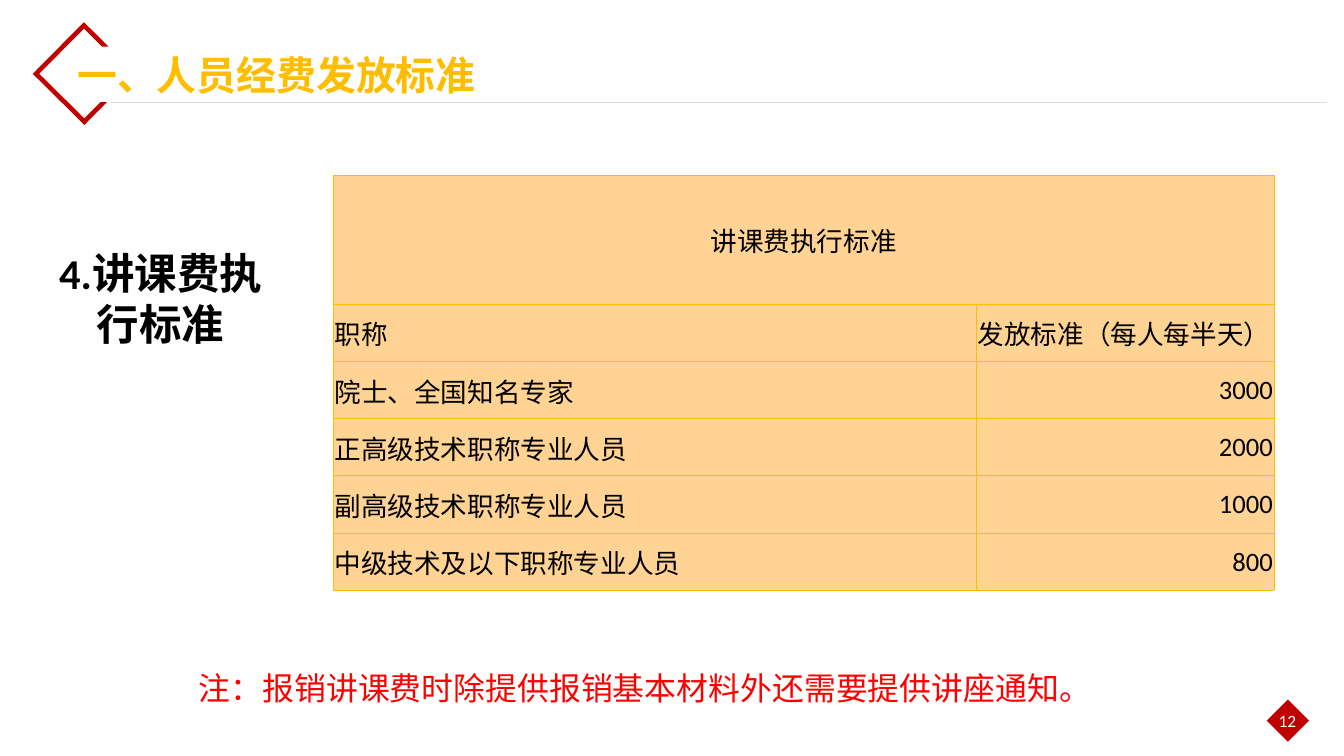
"""Build the slide on lecture fee standards."""
from lxml import etree
from pptx import Presentation
from pptx.dml.color import RGBColor
from pptx.enum.shapes import MSO_CONNECTOR, MSO_SHAPE
from pptx.enum.text import MSO_ANCHOR, MSO_AUTO_SIZE, PP_ALIGN
from pptx.oxml.ns import qn
from pptx.util import Cm, Pt

LEFT, CENTER, RIGHT = PP_ALIGN.LEFT, PP_ALIGN.CENTER, PP_ALIGN.RIGHT
TOP, MIDDLE = MSO_ANCHOR.TOP, MSO_ANCHOR.MIDDLE
DIAMOND, FRAME, RECTANGLE = MSO_SHAPE.DIAMOND, MSO_SHAPE.FRAME, MSO_SHAPE.RECTANGLE

RED = RGBColor(0xC0, 0x00, 0x00)
NOTE_RED = RGBColor(0xFF, 0x00, 0x00)
GOLD = RGBColor(0xFF, 0xBD, 0x00)
PEACH = RGBColor(0xFF, 0xD3, 0x93)
GREY = RGBColor(0xD9, 0xD9, 0xD9)
WHITE = RGBColor(0xFF, 0xFF, 0xFF)
BLACK = RGBColor(0x00, 0x00, 0x00)
LATIN_FONT, CHINESE_FONT = "Calibri", "Noto Sans CJK SC"

TITLE = "一、人员经费发放标准"
SUBTITLE = "4.讲课费执行标准"
NOTE = "注：报销讲课费时除提供报销基本材料外还需要提供讲座通知。"
PAGE_NUMBER = "12"
TABLE_HEADING = "讲课费执行标准"
TABLE_ROWS = [
    ("职称", "发放标准（每人每半天）"),
    ("院士、全国知名专家", "3000"),
    ("正高级技术职称专业人员", "2000"),
    ("副高级技术职称专业人员", "1000"),
    ("中级技术及以下职称专业人员", "800"),
]

SLIDE_SIZE = (35.71, 20.09)
TITLE_BOX = (1.8, 1.22, 11.53, 1.55)
SUBTITLE_BOX = (0.97, 6.45, 6.6, 3)
NOTE_BOX = (5.03, 17.65, 24.46, 1.27)
PAGE_NUMBER_BOX = (33.53, 18.75, 1.35, 0.84)
TITLE_RULE = (2.95, 2.72, 35.26, 2.72)
TABLE_ORIGIN = (8.86, 4.65)
COLUMN_WIDTHS = (17.09, 7.9)
HEADING_HEIGHT, ROW_HEIGHT = 3.43, 1.52
DECORATIONS = [
    (DIAMOND, (33.66, 18.59, 1.12, 1.12), RED, 0),
    (FRAME, (1.27, 0.99, 1.93, 1.93), RED, 44.7),
    (RECTANGLE, (2.24, 1.24, 8.53, 1.47), WHITE, 0),
]

TITLE_FORMAT = {"size": Pt(30), "bold": True, "name": CHINESE_FONT}
SUBTITLE_FORMAT = {"size": Pt(32), "bold": True, "name": LATIN_FONT}
NOTE_FORMAT = {"size": Pt(24), "name": LATIN_FONT}
CELL_FORMAT = {"size": Pt(20), "name": LATIN_FONT}
PAGE_NUMBER_FORMAT = {"size": Pt(13), "name": LATIN_FONT}
FRAME_FORMAT = {"vertical_anchor": TOP, "auto_size": MSO_AUTO_SIZE.NONE}
CELL_LAYOUT = {
    "vertical_anchor": MIDDLE,
    "margin_left": Cm(0.03),
    "margin_right": Cm(0.03),
    "margin_top": Cm(0.03),
    "margin_bottom": 0,
}


def set_attributes(target, values):
    """Set every named value on the target."""
    for name, value in values.items():
        setattr(target, name, value)


def write(text_frame, text, color, font_format, alignment):
    """Put one formatted paragraph into a text frame."""
    paragraph = text_frame.paragraphs[0]
    paragraph.alignment = alignment
    run = paragraph.add_run()
    run.text = text
    set_attributes(run.font, font_format)
    run.font.color.rgb = color
    properties = run._r.get_or_add_rPr()
    etree.SubElement(properties, qn("a:ea"), typeface=CHINESE_FONT)


def fill_text_shape(shape, box, text, color, font_format, alignment=LEFT, wrap=True):
    """Place a text shape and write its text."""
    shape.left, shape.top, shape.width, shape.height = map(Cm, box)
    set_attributes(shape.text_frame, FRAME_FORMAT)
    shape.text_frame.word_wrap = wrap
    write(shape.text_frame, text, color, font_format, alignment)


def add_text(slide, box, *content):
    """Add a text box with one paragraph."""
    fill_text_shape(slide.shapes.add_textbox(*map(Cm, box)), box, *content)


def add_decorations(slide):
    """Draw the page marker, the title frame and the title rule."""
    for kind, box, color, rotation in DECORATIONS:
        shape = slide.shapes.add_shape(kind, *map(Cm, box))
        shape.shadow.inherit = False
        shape.fill.solid()
        shape.fill.fore_color.rgb = color
        shape.line.fill.background()
        shape.rotation = rotation
        if kind == FRAME:
            shape.adjustments[0] = 0.063
    rule = slide.shapes.add_connector(MSO_CONNECTOR.STRAIGHT, *map(Cm, TITLE_RULE))
    rule.line.color.rgb = GREY
    rule.line.width = Pt(0.5)
    etree.SubElement(rule._element.spPr, qn("a:effectLst"))


def format_cell(cell):
    """Give a cell its margins, borders and fill."""
    set_attributes(cell, CELL_LAYOUT)
    properties = cell._tc.get_or_add_tcPr()
    for side in ("lnL", "lnR", "lnT", "lnB"):
        border = etree.SubElement(properties, qn(f"a:{side}"), w=str(Pt(0.5)))
        border_fill = etree.SubElement(border, qn("a:solidFill"))
        etree.SubElement(border_fill, qn("a:srgbClr"), val=str(GOLD))
    cell.fill.solid()
    cell.fill.fore_color.rgb = PEACH


def add_fee_table(slide):
    """Add the fee table under its merged heading."""
    heights = [HEADING_HEIGHT] + [ROW_HEIGHT] * len(TABLE_ROWS)
    size = (sum(COLUMN_WIDTHS), sum(heights))
    table = slide.shapes.add_table(
        len(heights), len(COLUMN_WIDTHS), *map(Cm, TABLE_ORIGIN + size)
    ).table
    for column, width in zip(table.columns, COLUMN_WIDTHS):
        column.width = Cm(width)
    for row, height in zip(table.rows, heights):
        row.height = Cm(height)
    for cell in table.iter_cells():
        format_cell(cell)
    heading = table.cell(0, 0)
    heading.merge(table.cell(0, 1))
    write(heading.text_frame, TABLE_HEADING, BLACK, CELL_FORMAT, CENTER)
    for row_index, texts in enumerate(TABLE_ROWS, start=1):
        for column_index, text in enumerate(texts):
            alignment = RIGHT if text.isdigit() else LEFT
            cell = table.cell(row_index, column_index)
            write(cell.text_frame, text, BLACK, CELL_FORMAT, alignment)


def main():
    """Create and save the presentation."""
    presentation = Presentation()
    presentation.slide_width, presentation.slide_height = map(Cm, SLIDE_SIZE)
    slide = presentation.slides.add_slide(presentation.slide_layouts[5])
    add_decorations(slide)
    title = slide.shapes.title
    fill_text_shape(title, TITLE_BOX, TITLE, GOLD, TITLE_FORMAT, LEFT, False)
    slide.shapes._spTree.append(title._element)
    add_text(slide, PAGE_NUMBER_BOX, PAGE_NUMBER, WHITE, PAGE_NUMBER_FORMAT, CENTER)
    add_text(slide, SUBTITLE_BOX, SUBTITLE, BLACK, SUBTITLE_FORMAT, CENTER)
    add_fee_table(slide)
    add_text(slide, NOTE_BOX, NOTE, NOTE_RED, NOTE_FORMAT, LEFT, False)
    presentation.save("out.pptx")


if __name__ == "__main__":
    main()
